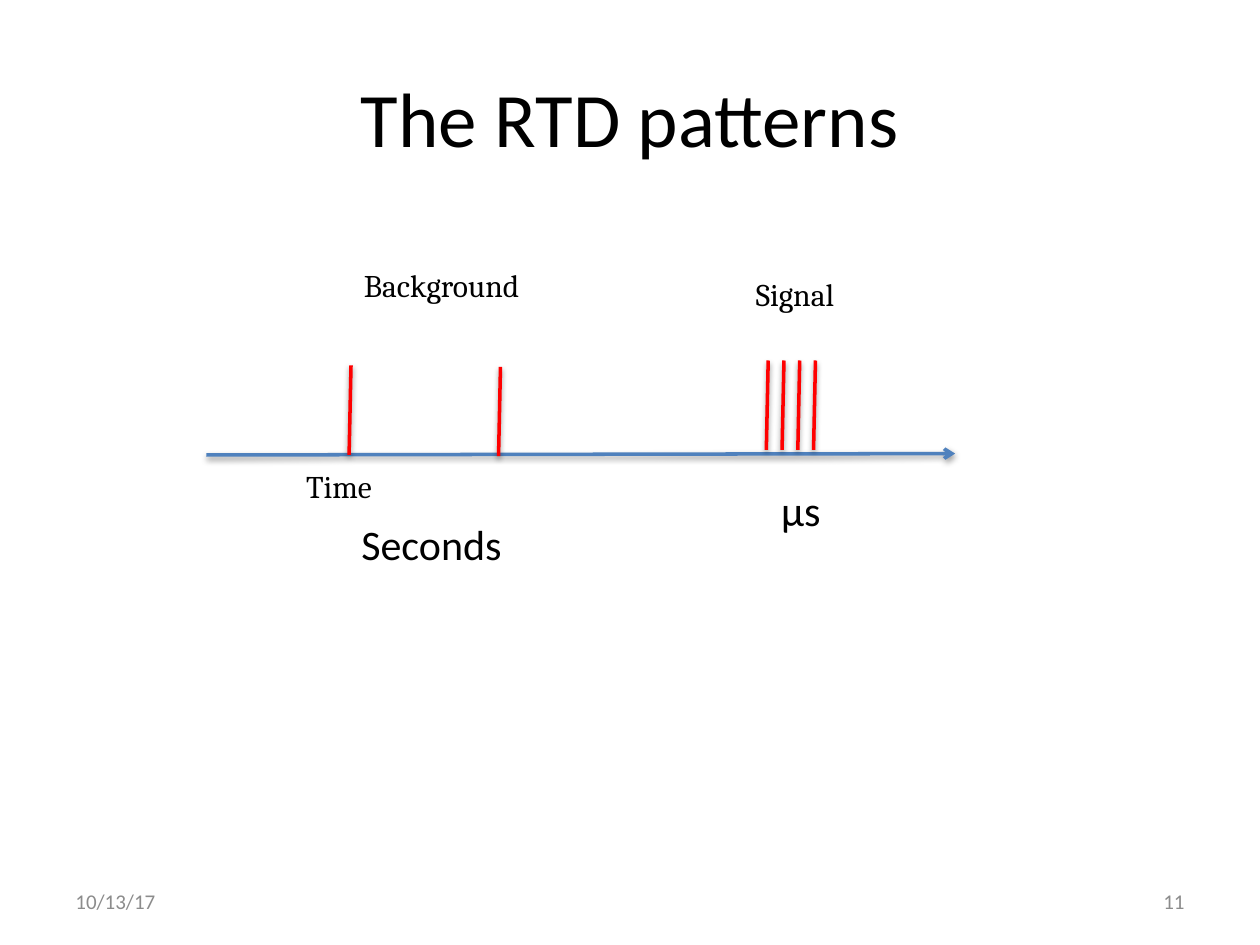
"""Build the slide comparing background and signal RTD pulse patterns."""
from dataclasses import dataclass

import lxml.etree
import pptx
import pptx.dml.color
import pptx.enum.text
import pptx.oxml
import pptx.oxml.ns
import pptx.util

Pt = pptx.util.Pt
Align = pptx.enum.text.PP_ALIGN
Anchor = pptx.enum.text.MSO_ANCHOR

COLORS = {
    "text": "000000",
    "footer": "8C8C8C",
    "axis": "4F81BD",
    "pulse": "FF0000",
    "shadow": "000000",
}
PULSE_HEIGHT = 51.1
PULSE_SLANT = 1.1
SIGNAL_START = 439
SIGNAL_GAP = 9
SIGNAL_COUNT = 4


@dataclass(frozen=True)
class Label:
    """A piece of text with its box and style."""

    text: str
    left: float
    top: float
    width: float
    height: float
    size: float
    font: str = "Calibri"
    color: str = "text"
    align: Align = Align.LEFT
    anchor: Anchor = Anchor.TOP
    wrap: bool = False


@dataclass(frozen=True)
class Stroke:
    """A straight line with a soft shadow."""

    start: tuple[float, float]
    end: tuple[float, float]
    color: str
    arrow: bool = False


def pulse(left: float, top: float) -> Stroke:
    """Return a slightly slanted pulse hanging from its top point."""
    return Stroke((left, top), (left - PULSE_SLANT, top + PULSE_HEIGHT), "pulse")


STROKES = [
    Stroke((118, 260), (545.8, 259.2), "axis", arrow=True),
    pulse(200.6, 208.8),
    pulse(286, 209.6),
    *(pulse(SIGNAL_START + SIGNAL_GAP * index, 206) for index in range(SIGNAL_COUNT)),
]

LABELS = [
    Label("The RTD patterns", 36, 21.6, 648, 90, 44,
          align=Align.CENTER, anchor=Anchor.MIDDLE, wrap=True),
    Label("Time", 167.8, 263.5, 54, 28, 18, "Cambria"),
    Label("Background", 200.9, 148.3, 107.3, 28, 18, "Cambria"),
    Label("Signal", 424.8, 153.4, 61.2, 28, 18, "Cambria"),
    Label("Seconds", 199.4, 293, 95.8, 36, 24),
    Label("µs", 439.2, 273.6, 37.4, 36, 24),
    Label("10/13/17", 36, 500.4, 168, 28.8, 12,
          color="footer", anchor=Anchor.MIDDLE, wrap=True),
    Label("11", 516, 500.4, 168, 28.8, 12,
          color="footer", align=Align.RIGHT, anchor=Anchor.MIDDLE, wrap=True),
]


def color_of(name: str) -> pptx.dml.color.RGBColor:
    """Look up a named colour."""
    return pptx.dml.color.RGBColor.from_string(COLORS[name])


def draw_stroke(slide: pptx.slide.Slide, stroke: Stroke) -> None:
    """Draw one line with its shadow and optional arrowhead."""
    connector = slide.shapes.add_connector(
        pptx.enum.shapes.MSO_CONNECTOR.STRAIGHT,
        *(Pt(value) for value in stroke.start + stroke.end),
    )
    connector.line.width = Pt(2)
    connector.line.color.rgb = color_of(stroke.color)
    if stroke.arrow:
        lxml.etree.SubElement(
            connector.line._get_or_add_ln(), pptx.oxml.ns.qn("a:tailEnd"), type="arrow"
        )
    effects = pptx.oxml.parse_xml(
        f'<a:effectLst {pptx.oxml.ns.nsdecls("a")}>'
        f'<a:outerShdw blurRad="{Pt(3.1)}" dist="{Pt(1.6)}" dir="5400000" rotWithShape="0">'
        f'<a:srgbClr val="{COLORS["shadow"]}"><a:alpha val="38000"/></a:srgbClr>'
        "</a:outerShdw></a:effectLst>"
    )
    connector._element.spPr.append(effects)


def draw_label(slide: pptx.slide.Slide, label: Label) -> None:
    """Draw one text box."""
    shape = slide.shapes.add_textbox(
        Pt(label.left), Pt(label.top), Pt(label.width), Pt(label.height)
    )
    frame = shape.text_frame
    frame.word_wrap = label.wrap
    frame.vertical_anchor = label.anchor
    if not label.wrap:
        frame.auto_size = pptx.enum.text.MSO_AUTO_SIZE.SHAPE_TO_FIT_TEXT
    paragraph = frame.paragraphs[0]
    paragraph.alignment = label.align
    run = paragraph.add_run()
    run.text = label.text
    run.font.name = label.font
    run.font.size = Pt(label.size)
    run.font.color.rgb = color_of(label.color)


def main() -> None:
    """Create and save the presentation."""
    presentation = pptx.Presentation()
    presentation.slide_width = Pt(720)
    presentation.slide_height = Pt(540)
    slide = presentation.slides.add_slide(presentation.slide_layouts[6])
    for stroke in STROKES:
        draw_stroke(slide, stroke)
    for label in LABELS:
        draw_label(slide, label)
    presentation.save("out.pptx")


if __name__ == "__main__":
    main()
